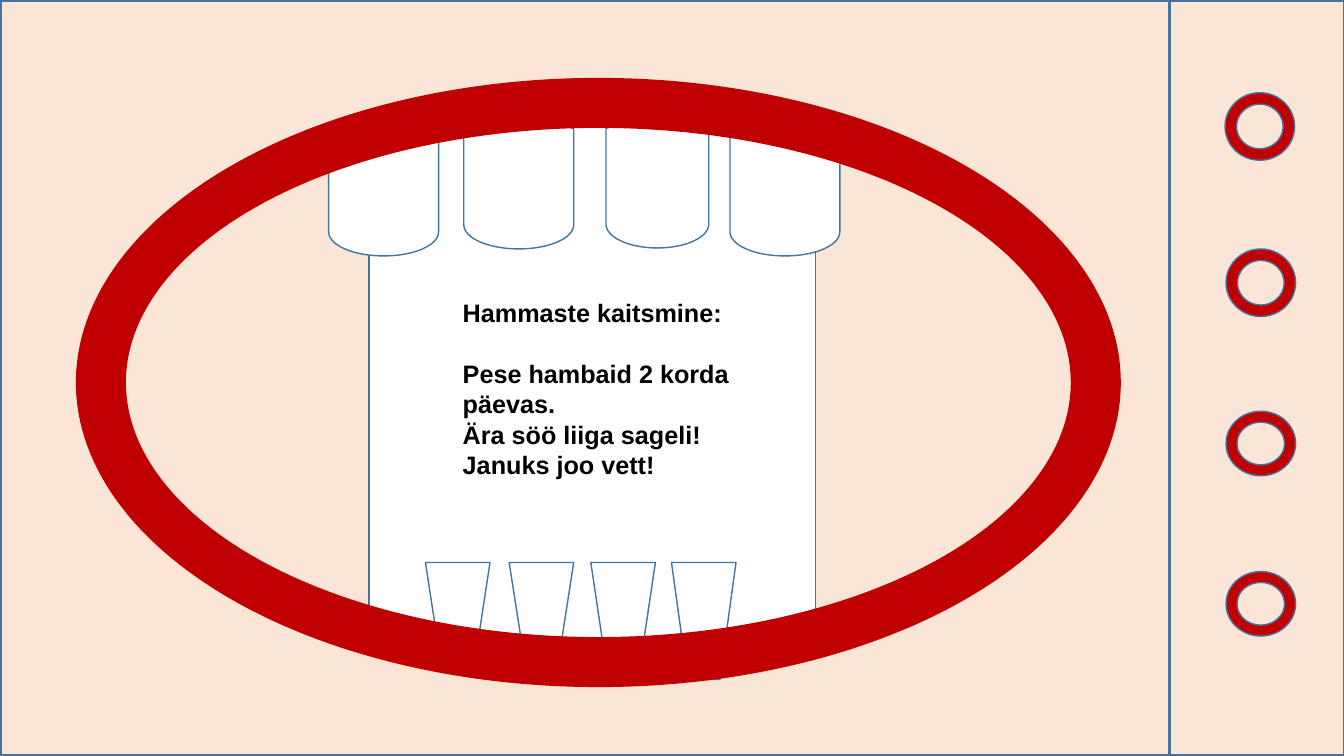
import pptx
import pptx.util
import pptx.dml.color
import pptx.enum.shapes
import pptx.enum.text

Inches = pptx.util.Inches
Pt = pptx.util.Pt
RGB = pptx.dml.color.RGBColor.from_string
KIND = pptx.enum.shapes.MSO_SHAPE

THEME = {
    "skin": RGB("FBE5D6"),
    "lip": RGB("C00000"),
    "tooth": RGB("FFFFFF"),
    "outline": RGB("43739E"),
    "thin": Pt(1),
    "thick": Pt(2.25),
    "line_pitch": Pt(21.7),
    "text": {"name": "Arial", "size": Pt(18), "bold": True},
    "text_color": RGB("000000"),
}

deck = pptx.Presentation()
deck.slide_width = Inches(13.33)
deck.slide_height = Inches(7.5)
slide = deck.slides.add_slide(deck.slide_layouts[6])


def draw(kind, left, top, width, height, fill, outline="outline", weight="thin", turn=0, adjust=()):
    part = slide.shapes.add_shape(kind, Inches(left), Inches(top), Inches(width), Inches(height))
    part.shadow.inherit = False
    part.fill.solid()
    part.fill.fore_color.rgb = THEME[fill]
    part.line.color.rgb = THEME[outline]
    part.line.width = THEME[weight]
    part.rotation = turn
    for index, value in enumerate(adjust):
        part.adjustments[index] = value
    return part


draw(KIND.RECTANGLE, 11.6, 0, 1.74, 7.5, "skin", weight="thick")
for left, top, height in [(12.15, 0.92, 0.67), (12.16, 2.47, 0.67), (12.16, 4.08, 0.64), (12.16, 5.67, 0.64)]:
    draw(KIND.DONUT, left, top, 0.69, height, "lip", adjust=[0.17])

draw(KIND.RECTANGLE, 0, 0, 11.6, 7.5, "skin", weight="thick")

advice = draw(KIND.RECTANGLE, 3.66, 1.25, 4.43, 5.21, "tooth").text_frame
frame_format = {
    "word_wrap": True,
    "vertical_anchor": pptx.enum.text.MSO_ANCHOR.MIDDLE,
    "margin_left": Inches(0.93),
}
for name, value in frame_format.items():
    setattr(advice, name, value)

advice_lines = [
    "Hammaste kaitsmine:",
    "Pese hambaid 2 korda",
    "päevas.",
    "Ära söö liiga sageli!",
    "Januks joo vett!",
]
for number, wording in enumerate(advice_lines):
    line = advice.add_paragraph() if number else advice.paragraphs[0]
    line.alignment = pptx.enum.text.PP_ALIGN.LEFT
    line.line_spacing = THEME["line_pitch"]
    if number == 1:
        line.space_before = THEME["line_pitch"]
    words = line.add_run()
    words.text = wording
    for name, value in THEME["text"].items():
        setattr(words.font, name, value)
    words.font.color.rgb = THEME["text_color"]

for left, height in [(4.22, 1.05), (5.05, 1.03), (5.86, 1.08), (6.66, 1.16)]:
    draw(KIND.TRAPEZOID, left, 5.58, 0.64, height, "tooth", turn=180)

for left, top, width, height in [
    (3.09, 1.28, 1.43, 1.09),
    (4.43, 1.21, 1.43, 1.09),
    (5.81, 1.24, 1.42, 1.02),
    (7.07, 1.28, 1.43, 1.09),
]:
    draw(KIND.FLOWCHART_DISPLAY, left, top, width, height, "tooth", turn=90)

draw(KIND.BLOCK_ARC, 0.76, 0.78, 10.35, 6.03, "lip", outline="lip", adjust=[214.47, 214.46, 0.08])

deck.save("out.pptx")
